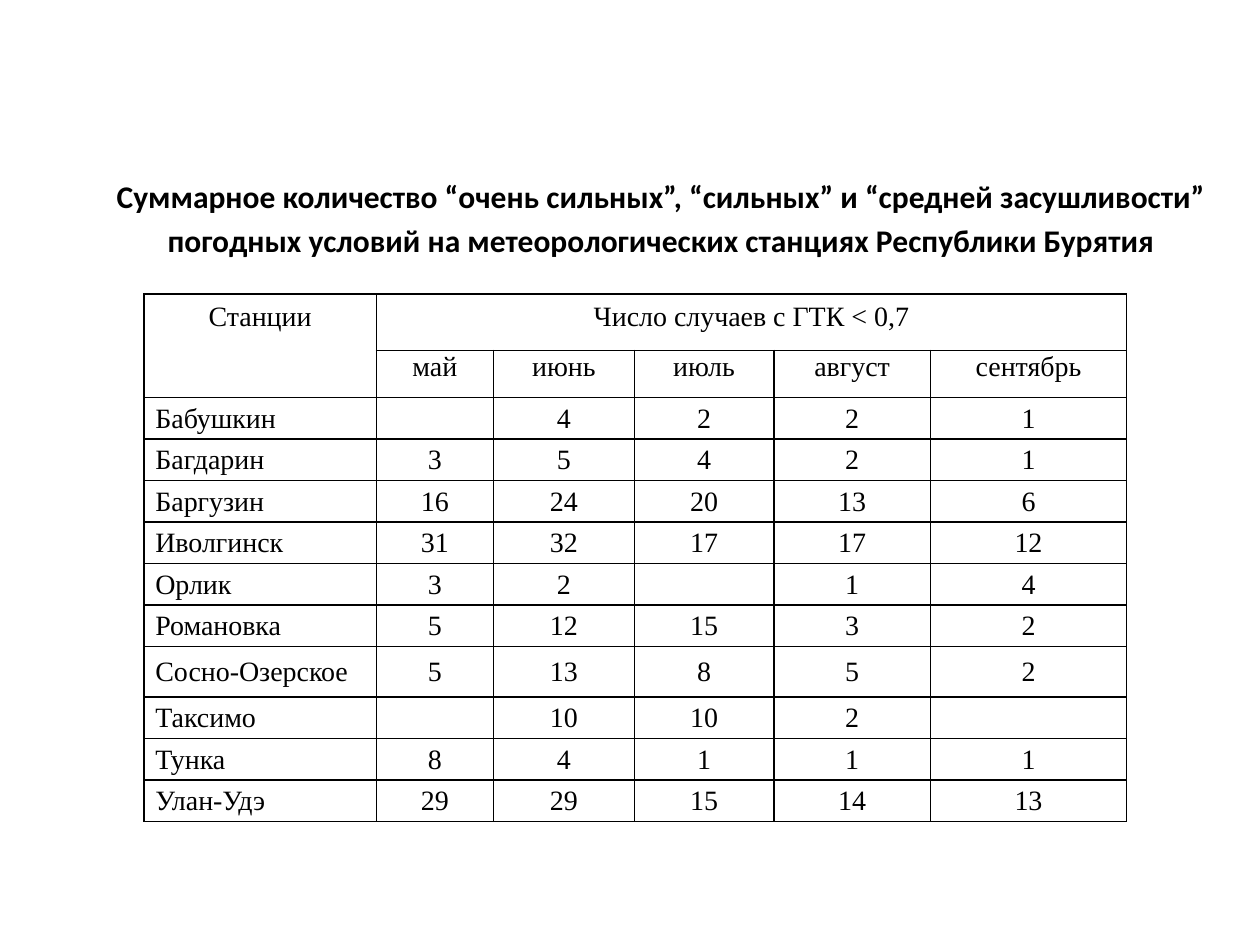
import lxml.etree
import pptx
import pptx.dml.color
import pptx.enum.text
import pptx.oxml
import pptx.oxml.ns
import pptx.util

Pt = pptx.util.Pt
Align = pptx.enum.text.PP_ALIGN
Anchor = pptx.enum.text.MSO_ANCHOR

HEADING = [
    "Суммарное количество “очень сильных”, “сильных” и “средней засушливости” ",
    "погодных условий на метеорологических станциях Республики Бурятия ",
]
MONTHS = ["май", "июнь", "июль", "август", "сентябрь"]
DROUGHTS = [
    ("Бабушкин", "", "4", "2", "2", "1"),
    ("Багдарин", "3", "5", "4", "2", "1"),
    ("Баргузин", "16", "24", "20", "13", "6"),
    ("Иволгинск", "31", "32", "17", "17", "12"),
    ("Орлик", "3", "2", "", "1", "4"),
    ("Романовка", "5", "12", "15", "3", "2"),
    ("Сосно-Озерское", "5", "13", "8", "5", "2"),
    ("Таксимо", "", "10", "10", "2", ""),
    ("Тунка", "8", "4", "1", "1", "1"),
    ("Улан-Удэ", "29", "29", "15", "14", "13"),
]


def color(value):
    return pptx.dml.color.RGBColor.from_string(value)


def put_text(frame, lines, *, font, size, ink, bold=False, align=Align.CENTER,
             spacing=None, after=None):
    for index, line in enumerate(lines):
        paragraph = frame.paragraphs[0] if index == 0 else frame.add_paragraph()
        paragraph.alignment = align
        paragraph.line_spacing = spacing
        paragraph.space_after = after
        if line:
            run = paragraph.add_run()
            run.text = line
            run.font.name = font
            run.font.size = Pt(size)
            run.font.bold = bold
            run.font.color.rgb = color(ink)


class Page:
    ink = "000000"
    title_font = "Calibri"
    table_font = "Times New Roman"

    def __init__(self, deck):
        self.slide = deck.slides.add_slide(deck.slide_layouts[5])

    def title(self, lines, left, top, width, height):
        heading = self.slide.shapes.title
        heading.left, heading.top = Pt(left), Pt(top)
        heading.width, heading.height = Pt(width), Pt(height)
        frame = heading.text_frame
        frame.word_wrap = True
        frame.auto_size = pptx.enum.text.MSO_AUTO_SIZE.NONE
        frame.vertical_anchor = Anchor.BOTTOM
        put_text(frame, lines, font=self.title_font, size=18, ink=self.ink,
                 bold=True, spacing=0.9, after=Pt(6))

    def table(self, left, top, widths, heights):
        grid = self.slide.shapes.add_table(
            len(heights), len(widths), Pt(left), Pt(top),
            Pt(sum(widths)), Pt(sum(heights))).table
        grid.first_row = grid.horz_banding = False
        for column, width in zip(grid.columns, widths):
            column.width = Pt(width)
        for row, height in zip(grid.rows, heights):
            row.height = Pt(height)
            for cell in row.cells:
                self.border(cell)
                cell.fill.background()
                self.insets(cell, 6.5, 0.7, 0)
        return grid

    def border(self, cell):
        properties = cell._tc.get_or_add_tcPr()
        for side in ("lnL", "lnR", "lnT", "lnB"):
            properties.append(pptx.oxml.parse_xml(
                f'<a:{side} {pptx.oxml.ns.nsdecls("a")} w="{Pt(1)}">'
                f'<a:solidFill><a:srgbClr val="{self.ink}"/></a:solidFill>'
                f'</a:{side}>'))

    def insets(self, cell, side, top, bottom):
        cell.margin_left = cell.margin_right = Pt(side)
        cell.margin_top, cell.margin_bottom = Pt(top), Pt(bottom)

    def cell(self, cell, text, align=Align.CENTER, anchor=Anchor.MIDDLE):
        cell.vertical_anchor = anchor
        put_text(cell.text_frame, [text], font=self.table_font, size=16,
                 ink=self.ink, align=align)

    def span(self, first, last, text):
        first.merge(last)
        self.insets(first, 8.6, 4.3, 4.3)
        self.cell(first, text, anchor=Anchor.TOP)


def main():
    deck = pptx.Presentation()
    deck.slide_width, deck.slide_height = Pt(720), Pt(540)
    page = Page(deck)
    page.title(HEADING, 22.3, 60.5, 715, 91.4)

    heights = [32.2, 27] + [28.8 if name == "Сосно-Озерское" else 23.75
                            for name, *_ in DROUGHTS]
    grid = page.table(82.3, 168, [132.8, 66.9, 80.6, 79.6, 89.6, 112], heights)
    page.span(grid.cell(0, 0), grid.cell(1, 0), "Станции")
    page.span(grid.cell(0, 1), grid.cell(0, 5), "Число случаев с ГТК < 0,7")
    for column, month in enumerate(MONTHS, 1):
        page.cell(grid.cell(1, column), month, anchor=Anchor.TOP)
    for row, (station, *counts) in enumerate(DROUGHTS, 2):
        page.cell(grid.cell(row, 0), station, align=Align.JUSTIFY)
        for column, count in enumerate(counts, 1):
            page.cell(grid.cell(row, column), count)
    deck.save("out.pptx")


if __name__ == "__main__":
    main()
